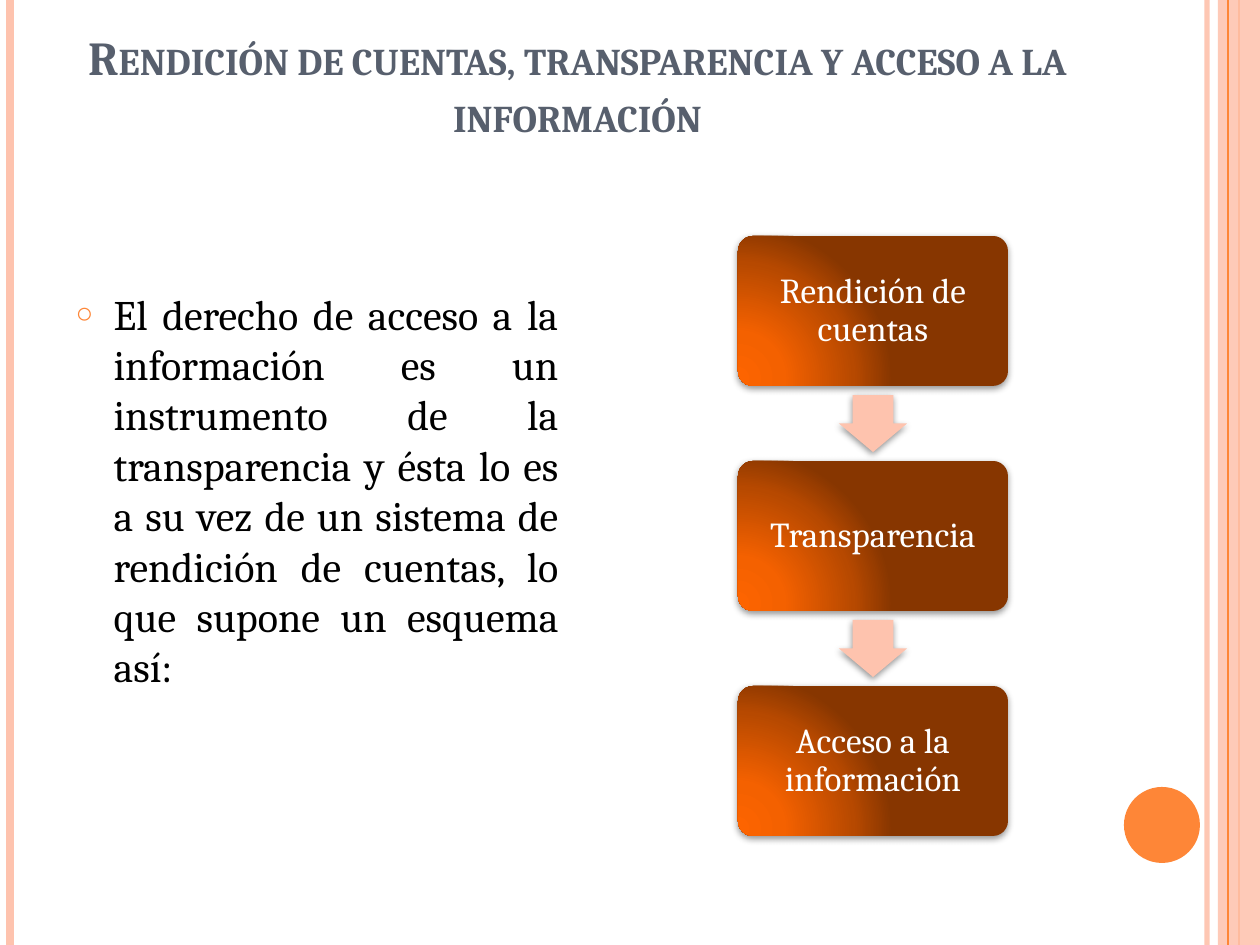
from lxml.etree import SubElement
from pptx import Presentation
from pptx.dml.color import RGBColor
from pptx.enum.shapes import MSO_CONNECTOR, MSO_SHAPE
from pptx.enum.text import MSO_ANCHOR, MSO_AUTO_SIZE, PP_ALIGN
from pptx.oxml import parse_xml
from pptx.oxml.ns import nsdecls, qn
from pptx.util import Pt

EMU_PER_PX = 914400 / 126
WIDTH, HEIGHT = 1260, 945
FONT = "Cambria"
COLORS = {
    "salmon": "FEC3AE",
    "orange": "FE8637",
    "title": "575F6D",
    "body": "000000",
    "label": "FFFFFF",
    "shadow": "000000",
}
GRADIENT = {0: "FD6400", 30: "F46100", 75: "B74900", 100: "873600"}
STEPS = ["Rendición de cuentas", "Transparencia", "Acceso a la información"]
STEP_LEFT, STEP_TOP, STEP_WIDTH, STEP_HEIGHT, STEP_PITCH = 738, 236, 270, 150, 225
ARROW_LENGTH, ARROW_BREADTH = 57, 68


def px(length):
    return round(length * EMU_PER_PX)


def rgb(name):
    return RGBColor.from_string(COLORS[name])


def set_alpha(properties, percent):
    color = next(properties.iter(qn("a:srgbClr")))
    SubElement(color, qn("a:alpha"), val=str(percent * 1000))


def place(element, left, top, width, height):
    element.left, element.top = px(left), px(top)
    element.width, element.height = px(width), px(height)


def add_stripe(slide, x, color, weight, alpha=None):
    stripe = slide.shapes.add_connector(MSO_CONNECTOR.STRAIGHT, px(x), 0, px(x), px(HEIGHT))
    stripe.line.color.rgb = rgb(color)
    stripe.line.width = Pt(weight)
    properties = stripe._element.spPr
    if alpha:
        set_alpha(properties, alpha)
    SubElement(properties, qn("a:effectLst"))


def add_solid(slide, preset, left, top, width, height, color):
    solid = slide.shapes.add_shape(preset, px(left), px(top), px(width), px(height))
    solid.shadow.inherit = False
    solid.fill.solid()
    solid.fill.fore_color.rgb = rgb(color)
    solid.line.fill.background()
    return solid


def add_shadow(solid):
    effects = solid._element.spPr.find(qn("a:effectLst"))
    effects.append(parse_xml(
        f'<a:outerShdw {nsdecls("a")} blurRad="{Pt(4)}" dist="{Pt(1.6)}" dir="5400000" '
        f'rotWithShape="0"><a:srgbClr val="{COLORS["shadow"]}"><a:alpha val="42000"/>'
        '</a:srgbClr></a:outerShdw>'))


def add_gradient(solid):
    stops = "".join(
        f'<a:gs pos="{position * 1000}"><a:srgbClr val="{color}"/></a:gs>'
        for position, color in GRADIENT.items())
    gradient = parse_xml(
        f'<a:gradFill {nsdecls("a")} rotWithShape="1"><a:gsLst>{stops}</a:gsLst>'
        '<a:path path="circle"><a:fillToRect l="5000" t="100000" r="120000" b="10000"/>'
        '</a:path></a:gradFill>')
    properties = solid._element.spPr
    properties.replace(properties.find(qn("a:solidFill")), gradient)


def format_paragraph(paragraph, size, color, alignment):
    paragraph.alignment = alignment
    paragraph.font.name = FONT
    paragraph.font.size = Pt(size)
    paragraph.font.color.rgb = rgb(color)


def add_step(slide, top, label):
    step = add_solid(slide, MSO_SHAPE.ROUNDED_RECTANGLE, STEP_LEFT, top,
                     STEP_WIDTH, STEP_HEIGHT, "orange")
    step.adjustments[0] = 0.1
    add_gradient(step)
    add_shadow(step)
    frame = step.text_frame
    frame.word_wrap = True
    frame.vertical_anchor = MSO_ANCHOR.MIDDLE
    frame.margin_left = frame.margin_right = px(14)
    frame.margin_top = frame.margin_bottom = px(14)
    frame.text = label
    format_paragraph(frame.paragraphs[0], 20, "label", PP_ALIGN.CENTER)
    frame.paragraphs[0].line_spacing = 0.9


def add_arrow(slide, center_y):
    left = STEP_LEFT + (STEP_WIDTH - ARROW_LENGTH) / 2
    arrow = add_solid(slide, MSO_SHAPE.RIGHT_ARROW, left, center_y - ARROW_BREADTH / 2,
                      ARROW_LENGTH, ARROW_BREADTH, "salmon")
    arrow.rotation = 90
    arrow.adjustments[0] = 0.6
    arrow.adjustments[1] = 0.5
    add_shadow(arrow)


def add_frame(slide):
    add_stripe(slide, 1207, "salmon", 3, 93)
    add_stripe(slide, 10, "salmon", 4.5)
    add_stripe(slide, 1239, "orange", 1.5)
    band = add_solid(slide, MSO_SHAPE.RECTANGLE, 1218, 0, WIDTH - 1218, HEIGHT, "salmon")
    set_alpha(band._element.spPr, 87)
    add_stripe(slide, 1228, "orange", 0.75)
    add_solid(slide, MSO_SHAPE.OVAL, 1124, 787, 76, 76, "orange")


def fill_title(slide, text):
    title = slide.shapes.title
    place(title, 63, 38, 1029, 110)
    frame = title.text_frame
    frame.text = text
    frame.auto_size = MSO_AUTO_SIZE.NONE
    frame.vertical_anchor = MSO_ANCHOR.BOTTOM
    heading = frame.paragraphs[0]
    format_paragraph(heading, 27, "title", PP_ALIGN.CENTER)
    heading.font.bold = True
    heading.font._element.set("cap", "small")


def fill_body(slide, text):
    body = slide.placeholders[1]
    place(body, 63, 220, 508, 672)
    frame = body.text_frame
    frame.text = text
    frame.auto_size = MSO_AUTO_SIZE.NONE
    frame.margin_top = px(68)
    statement = frame.paragraphs[0]
    format_paragraph(statement, 24, "body", PP_ALIGN.JUSTIFY)
    statement.space_before = Pt(0)
    properties = statement._p.get_or_add_pPr()
    properties.set("marL", str(px(38)))
    properties.set("indent", str(px(-38)))
    bullet_color = parse_xml(
        f'<a:buClr {nsdecls("a")}><a:srgbClr val="{COLORS["orange"]}"/></a:buClr>')
    bullet_size = parse_xml(f'<a:buSzPct {nsdecls("a")} val="70000"/>')
    bullet = parse_xml(f'<a:buChar {nsdecls("a")} char="○"/>')
    defaults = properties.find(qn("a:defRPr"))
    for part in (bullet_color, bullet_size, bullet):
        defaults.addprevious(part)


def main():
    deck = Presentation()
    deck.slide_width, deck.slide_height = px(WIDTH), px(HEIGHT)
    slide = deck.slides.add_slide(deck.slide_layouts[1])
    add_frame(slide)
    fill_title(slide, "Rendición de cuentas, transparencia y acceso a la información")
    fill_body(slide, "El derecho de acceso a la información es un instrumento de la "
                     "transparencia y ésta lo es a su vez de un sistema de rendición de "
                     "cuentas, lo que supone un esquema así:")
    for index, label in enumerate(STEPS):
        top = STEP_TOP + index * STEP_PITCH
        if index:
            add_arrow(slide, top - (STEP_PITCH - STEP_HEIGHT) / 2)
        add_step(slide, top, label)
    deck.save("out.pptx")


if __name__ == "__main__":
    main()
